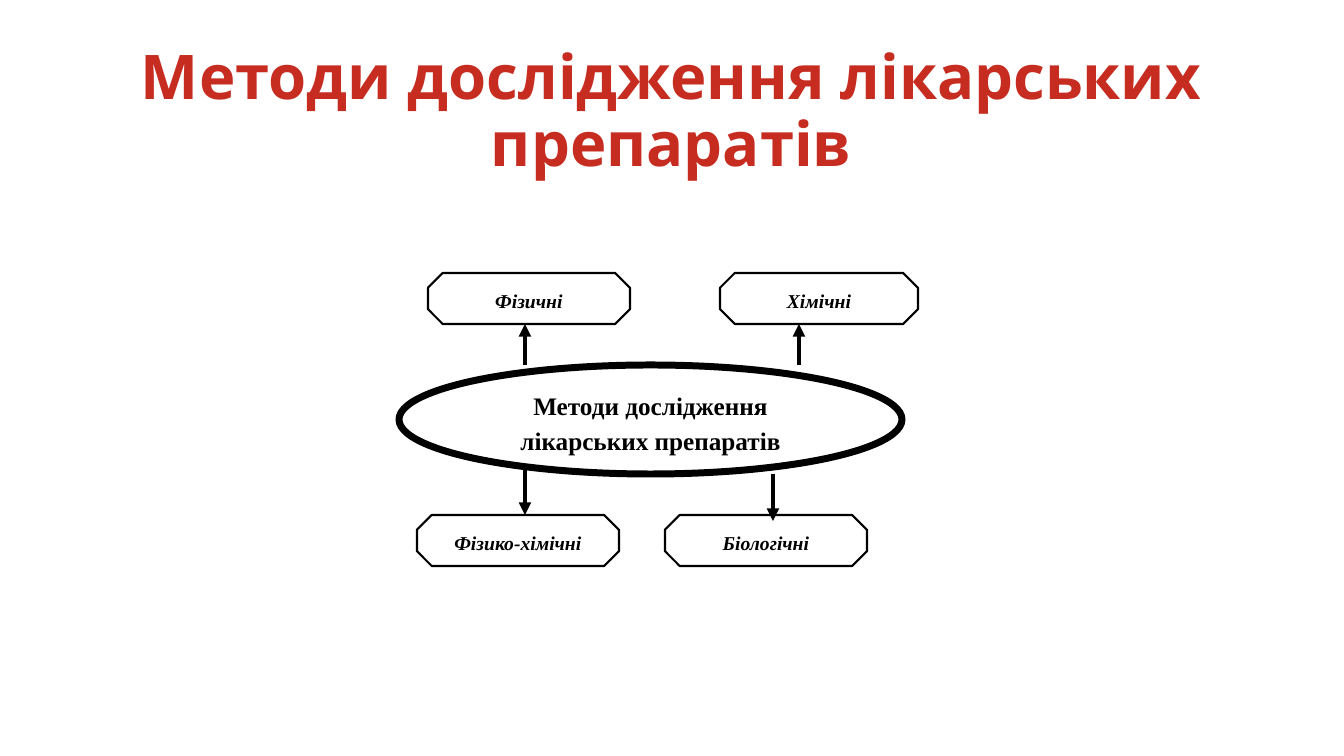
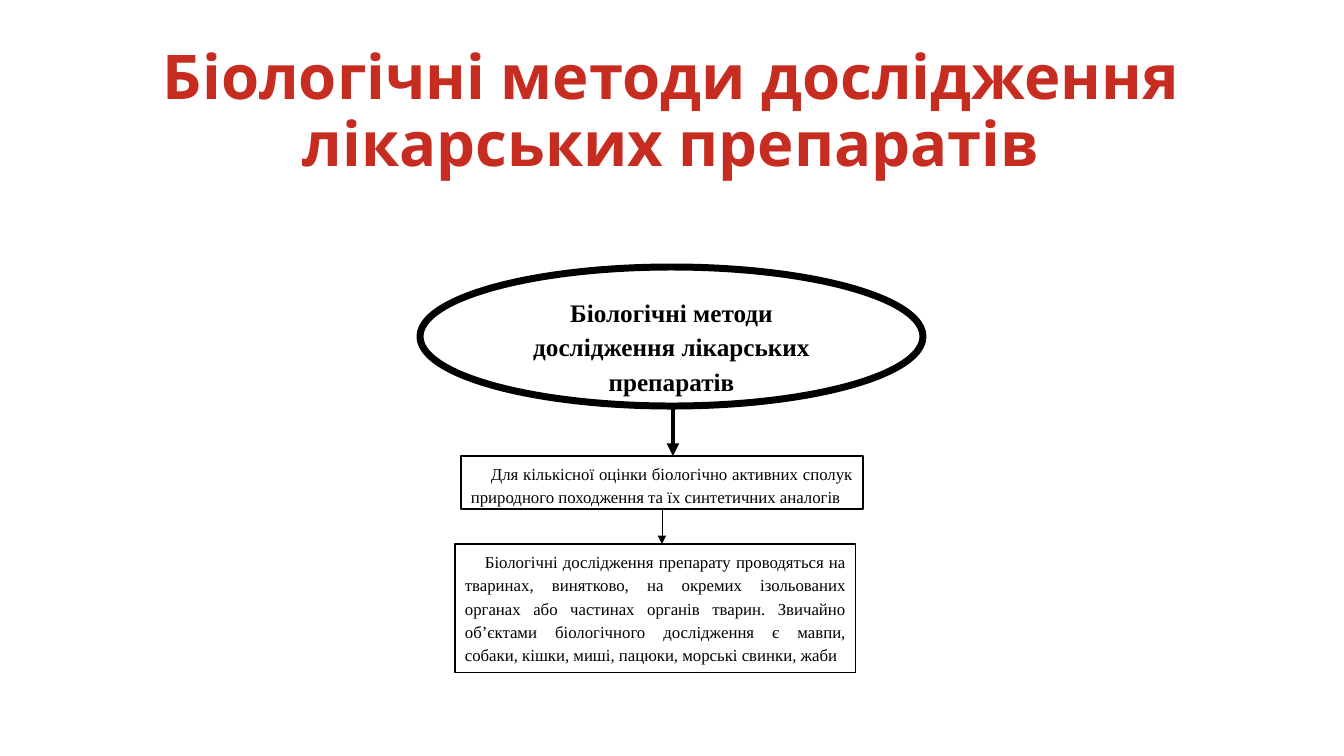
from lxml.etree import SubElement
from pptx import Presentation
from pptx.dml.color import RGBColor
from pptx.enum.shapes import MSO_CONNECTOR as Connector, MSO_SHAPE as Shape
from pptx.enum.text import MSO_ANCHOR as Anchor, PP_ALIGN as Align
from pptx.oxml.ns import qn
from pptx.util import Pt

EMU_PER_PX = 914400 / 100.8
PAGE_WIDTH, PAGE_HEIGHT = 1344, 756
COLORS = {"title": "C72C21", "ink": "000000", "paper": "FFFFFF"}
TITLE_FONT, BODY_FONT = "Karla", "Times New Roman"
ARROW_WIDTH = 3


def px(length):
    return round(length * EMU_PER_PX)


def color(name):
    return RGBColor.from_string(COLORS[name])


def set_text(box, text, size, font=BODY_FONT, ink="ink", bold=False, italic=False,
             align=Align.CENTER, spacing=1.15, indent=0, anchor=Anchor.TOP):
    frame = box.text_frame
    frame.word_wrap = True
    frame.vertical_anchor = anchor
    frame.text = text
    para = frame.paragraphs[0]
    para.alignment = align
    para.line_spacing = spacing
    if indent:
        para._p.get_or_add_pPr().set("indent", str(px(indent)))
    span = para.runs[0].font
    span.name, span.size = font, Pt(size)
    span.bold, span.italic = bold, italic
    span.color.rgb = color(ink)


def add_node(page, kind, left, top, width, height, line_width):
    node = page.shapes.add_shape(kind, px(left), px(top), px(width), px(height))
    node.shadow.inherit = False
    node.fill.solid()
    node.fill.fore_color.rgb = color("paper")
    node.line.color.rgb = color("ink")
    node.line.width = Pt(line_width)
    return node


def add_arrow(page, x, start, end, width=ARROW_WIDTH):
    """Vertical arrow with its head at end."""
    arrow = page.shapes.add_connector(Connector.STRAIGHT, px(x), px(start), px(x), px(end))
    arrow.line.color.rgb = color("ink")
    arrow.line.width = Pt(width)
    properties = arrow._element.spPr
    SubElement(properties.find(qn("a:ln")), qn("a:tailEnd"), type="triangle")
    SubElement(properties, qn("a:effectLst"))
    return arrow


def add_title(page, text):
    box = page.shapes.add_textbox(px(92), px(40), px(1159), px(146))
    set_text(box, text, 44, TITLE_FONT, "title", bold=True, spacing=0.9, anchor=Anchor.MIDDLE)


def add_topic(page, text, left, top, height):
    topic = add_node(page, Shape.OVAL, left, top, 503, height, 5)
    set_text(topic, text, 18, bold=True)


def add_method(page, text, left, top, width):
    method = add_node(page, Shape.OCTAGON, left, top, width, 51, 1.5)
    method.adjustments[0] = 0.29
    set_text(method, text, 14, bold=True, italic=True)


def add_note(page, text, left, top, width, height, line_width):
    note = add_node(page, Shape.RECTANGLE, left, top, width, height, line_width)
    set_text(note, text, 12, align=Align.JUSTIFY, indent=20)
    return note


def draw_methods(page, left, top):
    """Central topic with four methods around it."""
    add_topic(page, "Методи дослідження лікарських препаратів", left, top + 92, 109)
    methods = [
        ("Фізичні", 29, 0, 202),
        ("Хімічні", 321, 0, 198),
        ("Фізико-хімічні", 18, 242, 202),
        ("Біологічні", 266, 242, 202),
    ]
    for text, x, y, width in methods:
        add_method(page, text, left + x, top + y, width)
    for x, start, end in [(126, 92, 51), (400, 92, 51), (126, 196, 242), (374, 201, 248)]:
        add_arrow(page, left + x, top + start, top + end)


def draw_biological(page, left, top):
    """Topic followed by two explanatory notes."""
    add_topic(page, "Біологічні методи дослідження лікарських препаратів", left, top, 139)
    purpose = add_note(
        page,
        "Для кількісної оцінки біологічно активних сполук природного походження "
        "та їх синтетичних аналогів",
        left + 41, top + 189, 402, 53, 1)
    add_arrow(page, left + 253, top + 138, top + 189)
    add_note(
        page,
        "Біологічні дослідження препарату проводяться на тваринах, винятково, на окремих "
        "ізольованих органах або частинах органів тварин. Звичайно обʼєктами біологічного "
        "дослідження є мавпи, собаки, кішки, миші, пацюки, морські свинки, жаби",
        left + 35, top + 277, 401, 129, 0.75)
    link = add_arrow(page, left + 242, top + 242, top + 277, 0.25)
    link.begin_connect(purpose, 2)


def main():
    deck = Presentation()
    deck.slide_width, deck.slide_height = px(PAGE_WIDTH), px(PAGE_HEIGHT)
    slides = [
        ("Методи дослідження лікарських препаратів", draw_methods, 399, 273),
        ("Біологічні методи дослідження лікарських препаратів", draw_biological, 420, 267),
    ]
    for title, draw, left, top in slides:
        page = deck.slides.add_slide(deck.slide_layouts[6])
        add_title(page, title)
        draw(page, left, top)
    deck.save("out.pptx")


if __name__ == "__main__":
    main()
